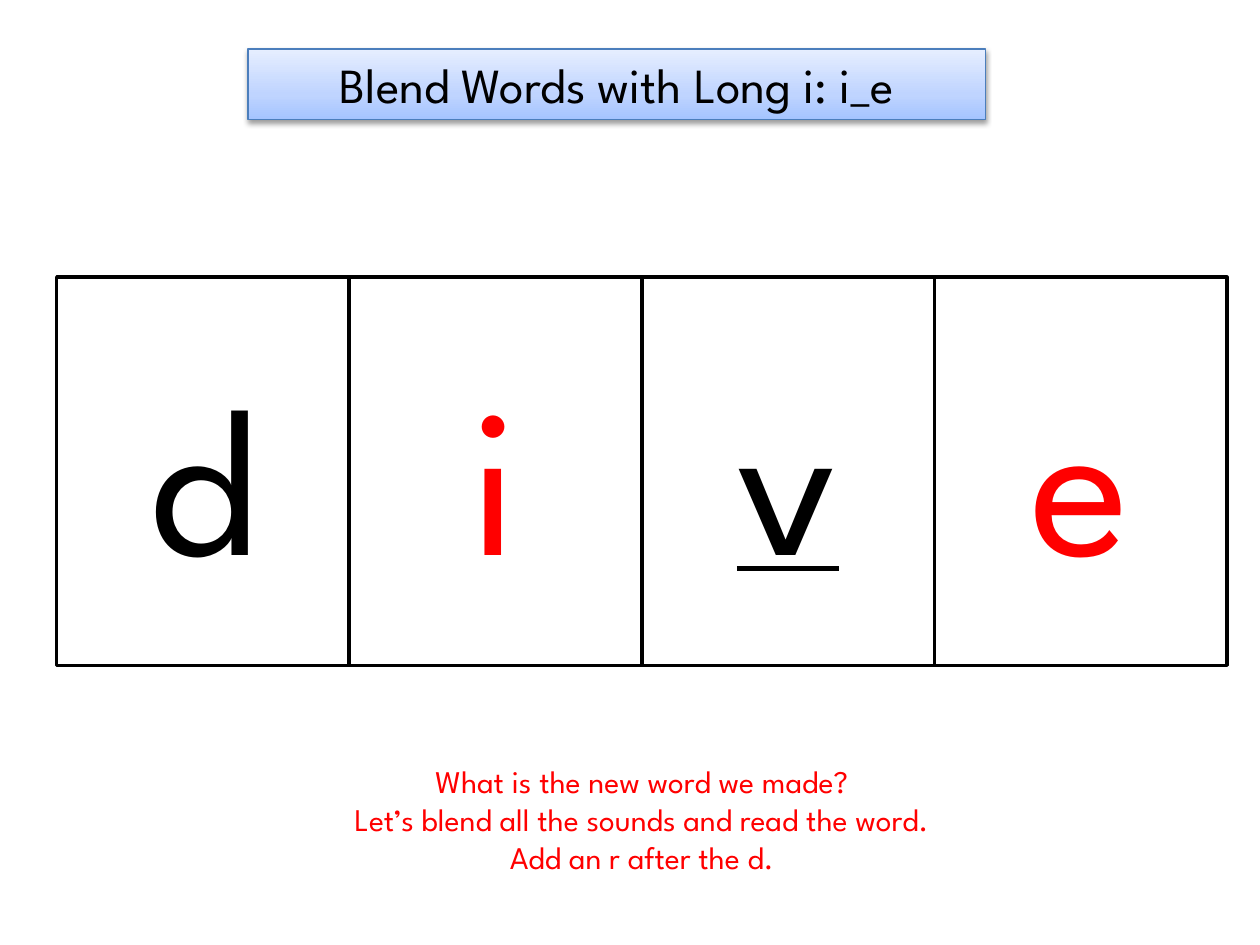
from copy import deepcopy

from lxml.etree import SubElement
from pptx import Presentation
from pptx.dml.color import RGBColor
from pptx.enum.shapes import MSO_SHAPE
from pptx.enum.text import MSO_ANCHOR, MSO_AUTO_SIZE, PP_ALIGN
from pptx.oxml.ns import qn
from pptx.util import Pt

BLACK = RGBColor(0x00, 0x00, 0x00)
WHITE = RGBColor(0xFF, 0xFF, 0xFF)
RED = RGBColor(0xFF, 0x00, 0x00)
BANNER_LINE = RGBColor(0x4B, 0x7E, 0xBC)
BANNER_STOPS = (
    (0, RGBColor(0xA4, 0xC4, 0xFF)),
    (0.35, RGBColor(0xBF, 0xD4, 0xFF)),
    (1, RGBColor(0xE6, 0xEE, 0xFF)),
)
FONT = "League Spartan"


def write_text(text_frame, text, size, color=BLACK, underline=None, anchor=MSO_ANCHOR.MIDDLE):
    text_frame.word_wrap = True
    text_frame.vertical_anchor = anchor
    text_frame.text = text
    for paragraph in text_frame.paragraphs:
        paragraph.alignment = PP_ALIGN.CENTER
        for run in paragraph.runs:
            run.font.name = FONT
            run.font.size = Pt(size)
            run.font.color.rgb = color
            run.font.underline = underline


class BlendingSlide:
    def __init__(self, presentation):
        self.slide = presentation.slides.add_slide(presentation.slide_layouts[6])

    def rectangle(self, left, top, width, height, line_color, line_width):
        shape = self.slide.shapes.add_shape(
            MSO_SHAPE.RECTANGLE, Pt(left), Pt(top), Pt(width), Pt(height)
        )
        shape.shadow.inherit = False
        shape.line.color.rgb = line_color
        shape.line.width = Pt(line_width)
        return shape

    def banner(self, text, left, top, width, height):
        shape = self.rectangle(left, top, width, height, BANNER_LINE, 0.75)
        shape.fill.gradient()
        shape.fill.gradient_angle = 90
        properties = shape.element.spPr
        stop_list = properties.find(".//" + qn("a:gsLst"))
        stop_list.append(deepcopy(stop_list[0]))
        for stop, (position, color) in zip(shape.fill.gradient_stops, BANNER_STOPS):
            stop.position = position
            stop.color.rgb = color
        shadow = SubElement(
            properties.find(qn("a:effectLst")), qn("a:outerShdw"),
            blurRad=str(Pt(3.1)), dist=str(Pt(1.6)), dir="5400000", rotWithShape="0",
        )
        shadow_color = SubElement(shadow, qn("a:srgbClr"), val=str(BLACK))
        SubElement(shadow_color, qn("a:alpha"), val="38000")
        write_text(shape.text_frame, text, size=28)

    def letter_card(self, letter, left, top, width, height, **text_format):
        shape = self.rectangle(left, top, width, height, BLACK, 2)
        shape.fill.solid()
        shape.fill.fore_color.rgb = WHITE
        write_text(shape.text_frame, letter, size=120, **text_format)

    def prompt(self, lines, left, top, width, height):
        box = self.slide.shapes.add_textbox(Pt(left), Pt(top), Pt(width), Pt(height))
        write_text(
            box.text_frame, "\n".join(lines), size=18, color=RED, anchor=MSO_ANCHOR.TOP
        )
        box.text_frame.auto_size = MSO_AUTO_SIZE.SHAPE_TO_FIT_TEXT


def main():
    presentation = Presentation()
    presentation.slide_width = Pt(720)
    presentation.slide_height = Pt(540)
    page = BlendingSlide(presentation)

    page.banner("Blend Words with Long i: i_e", 141.8, 28, 421.2, 40.3)

    card_width = 167.2
    cards = (
        ("d", {}),
        ("i", {"color": RED}),
        ("v", {"underline": True}),
        ("e", {"color": RED}),
    )
    for index, (letter, text_format) in enumerate(cards):
        left = 32.4 + index * card_width
        page.letter_card(letter, left, 158.4, card_width, 221.8, **text_format)

    page.prompt(
        (
            "What is the new word we made?",
            "Let’s blend all the sounds and read the word.",
            "Add an r after the d.",
        ),
        115.9, 432, 501.8, 72.7,
    )
    presentation.save("out.pptx")


if __name__ == "__main__":
    main()
